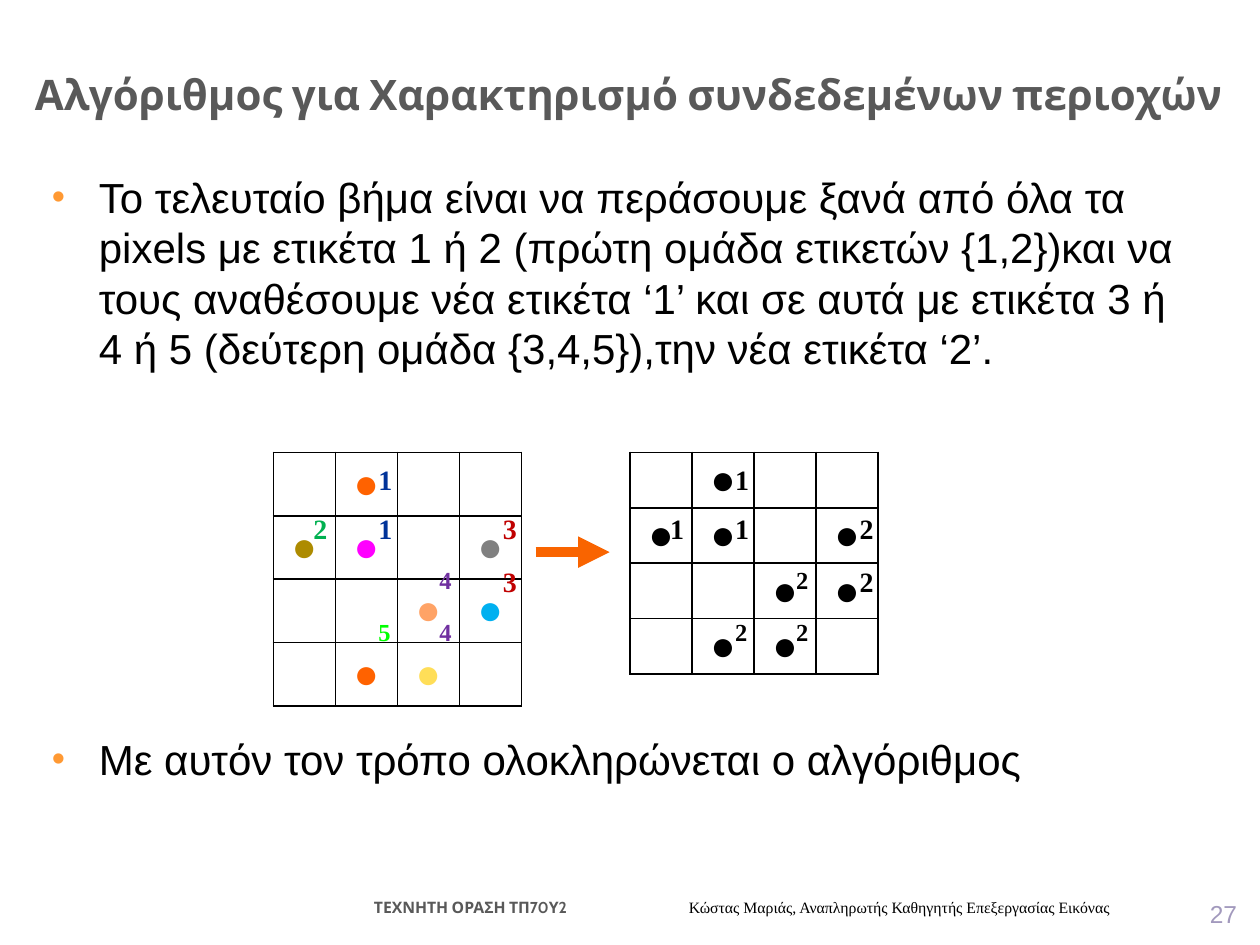
from lxml.etree import SubElement
from pptx import Presentation
from pptx.dml.color import RGBColor
from pptx.enum.shapes import MSO_CONNECTOR as Connector
from pptx.enum.text import MSO_ANCHOR as Anchor, MSO_AUTO_SIZE as AutoSize, PP_ALIGN as Align
from pptx.oxml.ns import qn
from pptx.util import Cm, Pt

COLOURS = {
    "black": "000000", "white": "FFFFFF", "heading": "595959", "number": "A299BD",
    "bullet": "FF9933", "arrow": "F96400", "orange": "FF6200", "olive": "AD8B00",
    "magenta": "FF00FF", "gray": "808080", "peach": "FFA366", "sky": "00B0F0",
    "yellow": "FFDE58", "navy": "003399", "green": "00B050", "red": "C00000",
    "purple": "7030A0", "lime": "00FF00",
}
SERIF, SANS, HEADING = "Times New Roman", "Arial", "Cabin"

# Each pixel: row, column, size of its label
PIXELS = [(0, 1, 16), (1, 0, 16), (1, 1, 16), (1, 3, 16),
          (2, 2, 14), (2, 3, 16), (3, 1, 14), (3, 2, 14)]
# Per pixel: dot colour, label, label colour
FIRST_PASS = [("orange", "1", "navy"), ("olive", "2", "green"), ("magenta", "1", "navy"),
              ("gray", "3", "red"), ("peach", "4", "purple"), ("sky", "3", "red"),
              ("orange", "5", "lime"), ("yellow", "4", "purple")]
FINAL_PASS = [("black", label, "black") for label in "11122222"]

GRID_TOP, COLUMN, ROW = 9.12, 1.25, 1.03
LABEL_X = [0.56, 1.87, 3.1, 4.38]
LABEL_Y = [9.19, 10.19, 11.26, 12.32]


def colour(name):
    return RGBColor.from_string(COLOURS[name])


class SlideBuilder:
    def __init__(self, deck):
        self.page = deck.slides.add_slide(deck.slide_layouts[1])

    def apply(self, target, values):
        for name, value in values.items():
            setattr(target, name, value)

    def place(self, box, left, top, width, height):
        self.apply(box, {"left": Cm(left), "top": Cm(top),
                         "width": Cm(width), "height": Cm(height)})

    def add_span(self, para, text, size, ink="black", face=SERIF, bold=False):
        span = para.add_run()
        span.text = text
        self.apply(span.font, {"size": Pt(size), "name": face, "bold": bold})
        span.font.color.rgb = colour(ink)

    def title(self, text, *area):
        box = self.page.shapes.title
        self.place(box, *area)
        self.apply(box.text_frame, {"vertical_anchor": Anchor.BOTTOM, "margin_left": 0,
                                    "margin_right": 0, "auto_size": AutoSize.NONE})
        para = box.text_frame.paragraphs[0]
        para.alignment = Align.CENTER
        self.add_span(para, text, 24, "heading", HEADING, True)

    def bullets(self, items, *area):
        box = self.page.placeholders[1]
        self.place(box, *area)
        frame = box.text_frame
        self.apply(frame, {"vertical_anchor": Anchor.TOP, "auto_size": AutoSize.NONE})
        for index, (text, gap) in enumerate(items):
            para = frame.add_paragraph() if index else frame.paragraphs[0]
            props = para._p.get_or_add_pPr()
            props.set("marL", str(Cm(0.95)))
            props.set("indent", str(Cm(-0.95)))
            tint = SubElement(props, qn("a:buClr"))
            SubElement(tint, qn("a:srgbClr"), val=COLOURS["bullet"])
            SubElement(props, qn("a:buSzPct"), val="90000")
            SubElement(props, qn("a:buChar"), char="•")
            para.space_before = Pt(gap)
            self.add_span(para, text, 24, face=SANS)

    def text(self, spans, *area, align=Align.LEFT, anchor=Anchor.TOP, wrap=True):
        box = self.page.shapes.add_textbox(*map(Cm, area))
        self.apply(box.text_frame, {"word_wrap": wrap, "vertical_anchor": anchor})
        para = box.text_frame.paragraphs[0]
        para.alignment = align
        for span in spans:
            self.add_span(para, *span)

    def cell_style(self, cell, margin):
        self.apply(cell, {"margin_top": Cm(margin), "margin_bottom": Cm(margin),
                          "vertical_anchor": Anchor.MIDDLE})
        props = cell._tc.get_or_add_tcPr()
        for side in ("lnL", "lnR", "lnT", "lnB"):
            edge = SubElement(props, qn(f"a:{side}"), w=str(Pt(1)))
            fill = SubElement(edge, qn("a:solidFill"))
            SubElement(fill, qn("a:srgbClr"), val=COLOURS["black"])
        cell.fill.solid()
        cell.fill.fore_color.rgb = colour("white")

    def pixel_grid(self, left, marks, margin):
        table = self.page.shapes.add_table(
            4, 4, Cm(left), Cm(GRID_TOP), Cm(4 * COLUMN), Cm(4 * ROW)).table
        self.apply(table, {"first_row": False, "horz_banding": False})
        for cell in table.iter_cells():
            self.cell_style(cell, margin)
        for (row, column, size), (dot, label, ink) in zip(PIXELS, marks):
            para = table.cell(row, column).text_frame.paragraphs[0]
            para.alignment = Align.CENTER
            self.add_span(para, "●", 24, dot, bold=row == 0)
            self.text([(label, size, ink, SERIF, True)], left + LABEL_X[column],
                      LABEL_Y[row], 0.78, 0.9, wrap=False)

    def arrow(self, x1, y1, x2, y2):
        line = self.page.shapes.add_connector(Connector.STRAIGHT, *map(Cm, (x1, y1, x2, y2)))
        line.line.width = Pt(6)
        line.line.color.rgb = colour("arrow")
        props = line._element.spPr
        SubElement(props.get_or_add_ln(), qn("a:tailEnd"), type="triangle")
        SubElement(props, qn("a:effectLst"))


def main():
    deck = Presentation()
    deck.slide_width, deck.slide_height = Cm(25.4), Cm(19.05)
    slide = SlideBuilder(deck)

    # Title and explanation
    slide.title("Αλγόριθμος για Χαρακτηρισμό συνδεδεμένων περιοχών", 0.43, 0.63, 24.49, 1.9)
    slide.bullets([
        ("Το τελευταίο βήμα είναι να περάσουμε ξανά από όλα τα pixels με ετικέτα 1 ή 2 "
         "(πρώτη ομάδα ετικετών {1,2})και να τους αναθέσουμε νέα ετικέτα ‘1’ και σε αυτά "
         "με ετικέτα 3 ή 4 ή 5 (δεύτερη ομάδα {3,4,5}),την νέα ετικέτα ‘2’.", 0),
        ("Με αυτόν τον τρόπο ολοκληρώνεται ο αλγόριθμος", 206),
    ], 0.79, 3.33, 23.29, 14.6)

    # Labels before and after merging
    slide.pixel_grid(12.7, FINAL_PASS, 0.09)
    slide.pixel_grid(5.51, FIRST_PASS, 0.13)
    slide.arrow(10.8, 11.13, 12.29, 11.13)

    # Footer
    slide.text([("27", 14, "number", SANS)], 21.46, 18.06, 3.73, 0.79,
               align=Align.RIGHT, anchor=Anchor.BOTTOM)
    slide.text([("ΤΕΧΝΗΤΗ ΟΡΑΣΗ ΤΠ70Υ2\t\t", 9, "heading", HEADING, True),
                ("Κώστας Μαριάς, Αναπληρωτής Καθηγητής Επεξεργασίας Εικόνας", 9)],
               7.29, 17.98, 17.25, 0.64)
    deck.save("out.pptx")


if __name__ == "__main__":
    main()
